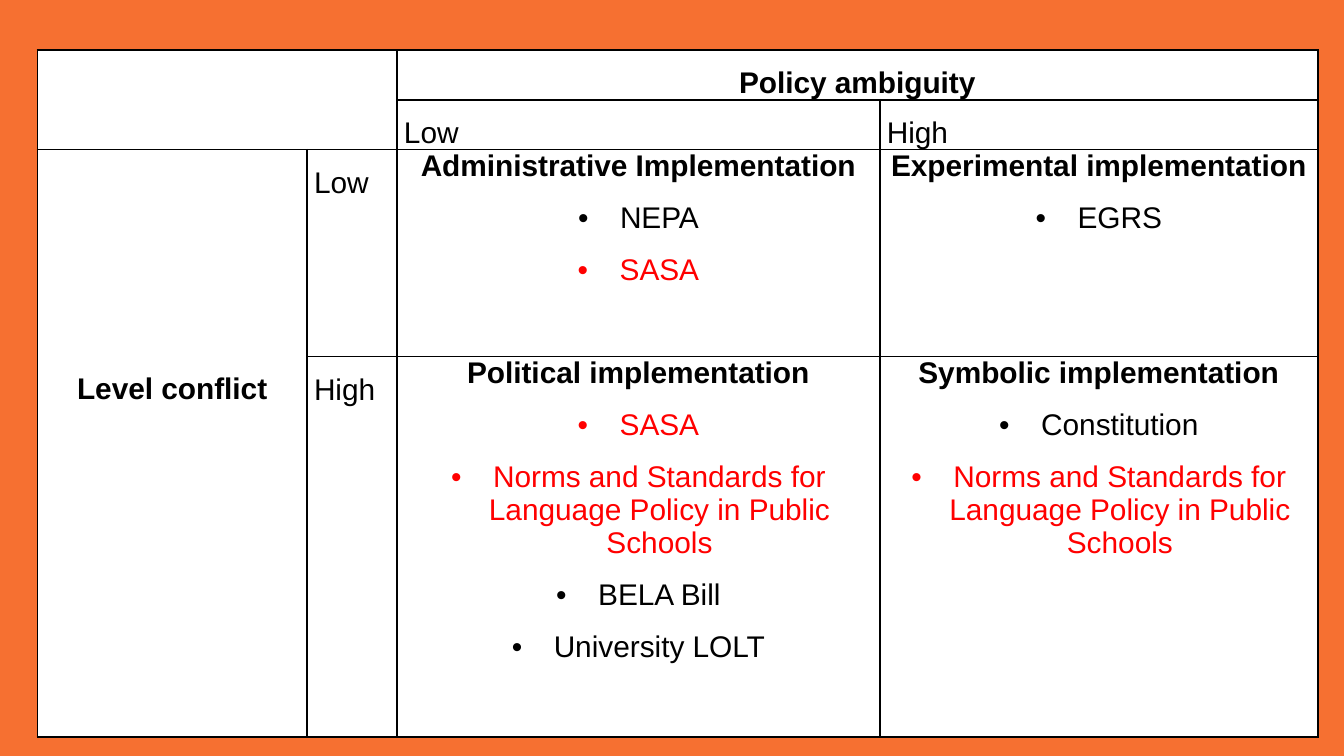
from lxml import etree
from pptx import Presentation
from pptx.dml.color import RGBColor
from pptx.enum import text
from pptx.oxml import ns
from pptx.util import Pt

ORANGE = RGBColor(0xF6, 0x70, 0x31)
WHITE = RGBColor(0xFF, 0xFF, 0xFF)
BLACK = RGBColor(0, 0, 0)
RED = RGBColor(0xFF, 0, 0)
CENTER, JUSTIFY = text.PP_ALIGN.CENTER, text.PP_ALIGN.JUSTIFY

# Content
AMBIGUITY = "Policy ambiguity"
CONFLICT = "Level conflict"
LEVELS = ["Low", "High"]
NORMS = "Norms and Standards for Language Policy in Public Schools"
# One row per level of conflict, one column per level of ambiguity
QUADRANTS = [
    [("Administrative Implementation", [("NEPA", BLACK), ("SASA", RED)]),
     ("Experimental implementation", [("EGRS", BLACK)])],
    [("Political implementation", [("SASA", RED), (NORMS, RED),
                                   ("BELA Bill", BLACK), ("University LOLT", BLACK)]),
     ("Symbolic implementation", [("Constitution", BLACK), (NORMS, RED)])],
]

# Layout, in points
LEFT, TOP = 20, 26.8
COL_WIDTHS = [144.5, 48.2, 258.7, 234.6]
ROW_HEIGHTS = [26.6, 26.6, 110.9, 203.8]
CONFLICT_DROP = 110.4
BULLET_INDENT = 22.5


def add_text(cell, content, first=False, bold=False, color=BLACK,
             align=CENTER, spacing=None, bullet=False):
    tf = cell.text_frame
    p = tf.paragraphs[0] if first else tf.add_paragraph()
    p.alignment = align
    p.space_after = Pt(10)
    if spacing:
        p.line_spacing = spacing
    if bullet:
        pPr = p._p.get_or_add_pPr()
        pPr.set("marL", str(Pt(BULLET_INDENT)))
        pPr.set("indent", str(-Pt(BULLET_INDENT)))
        etree.SubElement(pPr, ns.qn("a:buFont")).set("typeface", "Arial")
        etree.SubElement(pPr, ns.qn("a:buChar")).set("char", "•")
    r = p.add_run()
    r.text = content
    r.font.name = "Arial"
    r.font.size = Pt(16)
    r.font.bold = bold
    r.font.color.rgb = color


def add_borders(cell):
    tcPr = cell._tc.get_or_add_tcPr()
    for i, side in enumerate(("lnL", "lnR", "lnT", "lnB")):
        ln = etree.Element(ns.qn("a:" + side), w=str(Pt(1)))
        fill = etree.SubElement(ln, ns.qn("a:solidFill"))
        etree.SubElement(fill, ns.qn("a:srgbClr")).set("val", str(BLACK))
        tcPr.insert(i, ln)


def main():
    prs = Presentation()
    prs.slide_width, prs.slide_height = Pt(720), Pt(405)
    s = prs.slides.add_slide(prs.slide_layouts[6])
    s.background.fill.solid()
    s.background.fill.fore_color.rgb = ORANGE

    # Table grid
    table = s.shapes.add_table(
        len(ROW_HEIGHTS), len(COL_WIDTHS), Pt(LEFT), Pt(TOP),
        Pt(sum(COL_WIDTHS)), Pt(sum(ROW_HEIGHTS))).table
    table.first_row = table.horz_banding = False
    for col, width in zip(table.columns, COL_WIDTHS):
        col.width = Pt(width)
    for row, height in zip(table.rows, ROW_HEIGHTS):
        row.height = Pt(height)
    for cell in table.iter_cells():
        cell.margin_left = cell.margin_right = Pt(3.75)
        cell.margin_top = cell.margin_bottom = 0
        cell.fill.solid()
        cell.fill.fore_color.rgb = WHITE
        add_borders(cell)

    # Merged corner and axis headings
    corner, ambiguity, conflict = (table.cell(*at) for at in ((0, 0), (0, 2), (2, 0)))
    corner.merge(table.cell(1, 1))
    ambiguity.merge(table.cell(0, 3))
    conflict.merge(table.cell(3, 0))
    conflict.margin_top = Pt(CONFLICT_DROP)
    add_text(ambiguity, AMBIGUITY, first=True, bold=True, spacing=1.5)
    add_text(conflict, CONFLICT, first=True, bold=True, spacing=1.5)

    # Level labels along both axes
    for i, level in enumerate(LEVELS, start=2):
        for cell in (table.cell(1, i), table.cell(i, 1)):
            add_text(cell, level, first=True, align=JUSTIFY, spacing=1.5)

    # Quadrants
    for i, quadrant_row in enumerate(QUADRANTS, start=2):
        for j, (heading, policies) in enumerate(quadrant_row, start=2):
            cell = table.cell(i, j)
            add_text(cell, heading, first=True, bold=True)
            for policy, color in policies:
                add_text(cell, policy, color=color, bullet=True)

    prs.save("out.pptx")


if __name__ == "__main__":
    main()
